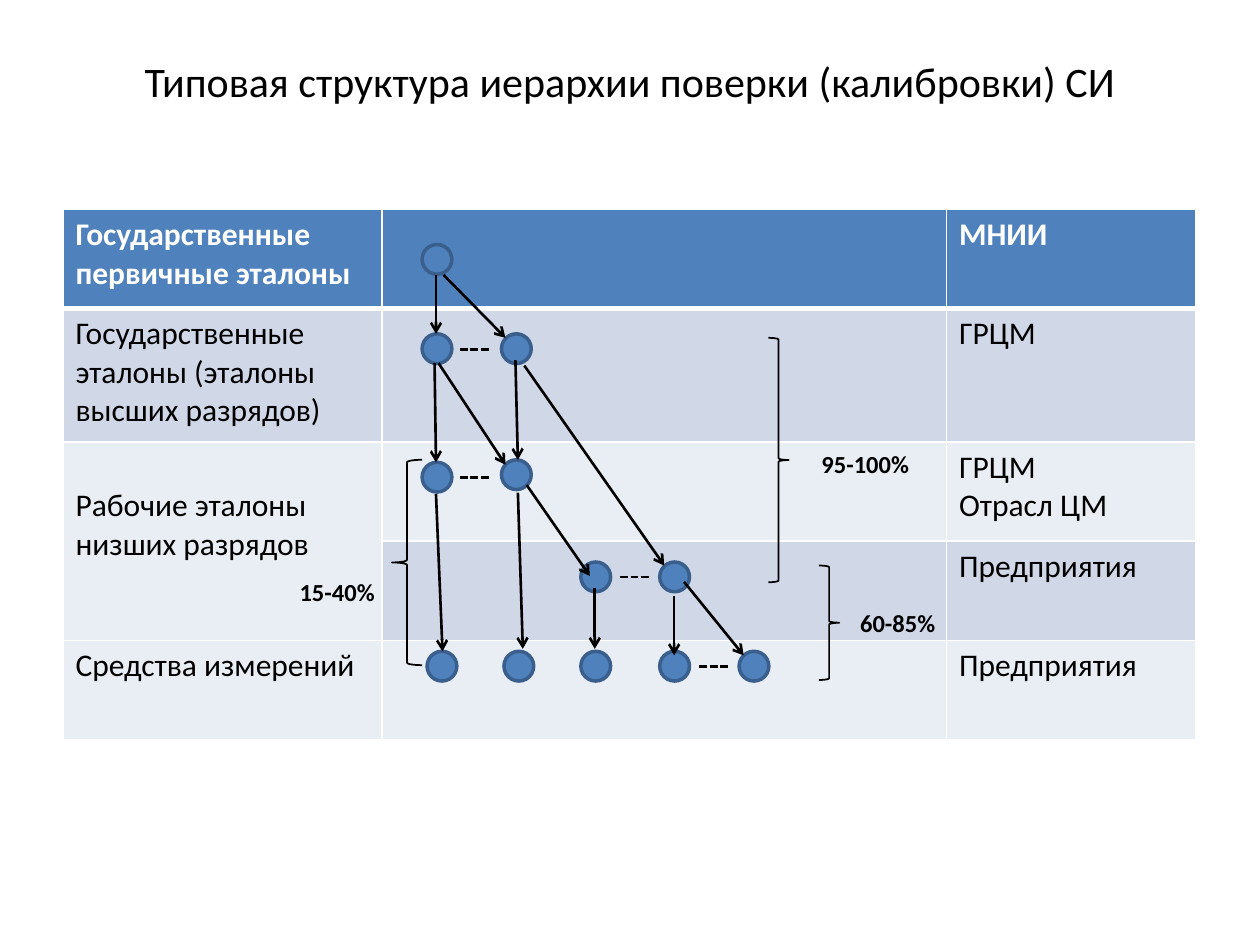
import pptx
import pptx.dml.color
import pptx.enum.dml
import pptx.enum.shapes
import pptx.enum.text
import pptx.oxml
import pptx.oxml.ns
import pptx.util
from lxml import etree

Cm, Pt = pptx.util.Cm, pptx.util.Pt
RGBColor = pptx.dml.color.RGBColor
MSO_SHAPE = pptx.enum.shapes.MSO_SHAPE
qn = pptx.oxml.ns.qn

BLACK = RGBColor(0x00, 0x00, 0x00)
WHITE = RGBColor(0xFF, 0xFF, 0xFF)
BLUE = RGBColor(0x4F, 0x81, 0xBD)
DARK_BLUE = RGBColor(0x3A, 0x5F, 0x8C)
BAND_DARK = RGBColor(0xD0, 0xD8, 0xE8)
BAND_LIGHT = RGBColor(0xE9, 0xED, 0xF4)


def write(tf, text, color, **formats):
    """Fill a text frame, one paragraph per line of text."""
    tf.word_wrap = True
    tf.text = text
    for p in tf.paragraphs:
        p.font.color.rgb = color
        for name, value in {"name": "Calibri", **formats}.items():
            setattr(p.font, name, value)


def add_line(x1, y1, x2, y2):
    """Draw a black line; lengths are in centimetres."""
    line = s.shapes.add_connector(pptx.enum.shapes.MSO_CONNECTOR.STRAIGHT,
                                  Cm(x1), Cm(y1), Cm(x2), Cm(y2))
    line.line.color.rgb = BLACK
    line.line.width = Pt(1.5)
    etree.SubElement(line._element.spPr, qn("a:effectLst"))
    return line


prs = pptx.Presentation()
prs.slide_width, prs.slide_height = Cm(25.4), Cm(19.05)
s = prs.slides.add_slide(prs.slide_layouts[6])

# Title
title = s.shapes.add_textbox(Cm(1.27), Cm(0.76), Cm(22.86), Cm(1.75))
write(title.text_frame, "Типовая структура иерархии поверки (калибровки) СИ", BLACK, size=Pt(24))
title.text_frame.vertical_anchor = pptx.enum.text.MSO_ANCHOR.MIDDLE
title.text_frame.paragraphs[0].alignment = pptx.enum.text.PP_ALIGN.CENTER

# Table: levels on the left, organisations on the right
rows = [
    ("Государственные первичные эталоны", "МНИИ"),
    ("Государственные эталоны (эталоны высших разрядов)", "ГРЦМ"),
    ("Рабочие эталоны низших разрядов", "ГРЦМ\nОтрасл ЦМ"),
    ("", "Предприятия"),
    ("Средства измерений", "Предприятия"),
]
row_fills = [BLUE, BAND_DARK, BAND_LIGHT, BAND_DARK, BAND_LIGHT]
col_widths = [6.43, 11.38, 5.03]
row_heights = [2, 2.69, 2, 2, 2]
table = s.shapes.add_table(len(rows), len(col_widths), Cm(1.27), Cm(4.22),
                           Cm(sum(col_widths)), Cm(sum(row_heights))).table
for column, width in zip(table.columns, col_widths):
    column.width = Cm(width)
for row, height in zip(table.rows, row_heights):
    row.height = Cm(height)

for i, (level, organisation) in enumerate(rows):
    header = i == 0
    for j, text in enumerate((level, "", organisation)):
        cell = table.cell(i, j)
        if text:
            write(cell.text_frame, text, WHITE if header else BLACK, size=Pt(18), bold=header)
        cell.fill.solid()
        cell.fill.fore_color.rgb = row_fills[i]
        widths = {"lnL": 1, "lnR": 1, "lnT": 3 if i == 1 else 1, "lnB": 3 if header else 1}
        for k, (side, width) in enumerate(widths.items()):
            border = pptx.oxml.parse_xml(
                f'<a:{side} xmlns:a="http://schemas.openxmlformats.org/drawingml/2006/main" '
                f'w="{Pt(width)}"><a:solidFill><a:srgbClr val="{WHITE}"/></a:solidFill></a:{side}>')
            cell._tc.get_or_add_tcPr().insert(k, border)
table.cell(2, 0).merge(table.cell(3, 0))
table.cell(2, 0).margin_top = Cm(0.9)

# Nodes of the hierarchy, level by level
levels = [
    (4.93, [8.51]),
    (6.73, [8.51, 10.11]),
    (9.32, [8.51]),
    (9.27, [10.11]),
    (11.33, [11.71, 13.3]),
    (13.13, [8.61, 10.16, 11.71, 13.3, 14.9]),
]
for top, lefts in levels:
    for left in lefts:
        sp = s.shapes.add_shape(MSO_SHAPE.FLOWCHART_CONNECTOR, Cm(left), Cm(top), Cm(0.6), Cm(0.6))
        sp.shadow.inherit = False
        sp.fill.solid()
        sp.fill.fore_color.rgb = BLUE
        sp.line.color.rgb = DARK_BLUE
        sp.line.width = Pt(2)

# Arrows from each standard to those it verifies
arrows = [
    (8.79, 5.54, 8.79, 6.73),
    (8.94, 5.54, 10.19, 6.81),
    (8.76, 7.32, 8.79, 9.32),
    (8.84, 7.32, 10.19, 9.37),
    (10.39, 7.26, 10.44, 9.27),
    (10.57, 7.37, 13.39, 11.4),
    (8.79, 9.96, 8.92, 13.13),
    (10.44, 9.93, 10.54, 13.08),
    (10.62, 9.78, 11.89, 11.61),
    (11.99, 11.86, 11.99, 13.08),
    (13.59, 12.01, 13.59, 13.21),
    (13.79, 11.73, 14.99, 13.21),
]
for ends in arrows:
    arrow = add_line(*ends)
    etree.SubElement(arrow.line._get_or_add_ln(), qn("a:tailEnd"), type="arrow")

# Dashes for the nodes left out
for x, y in [(9.27, 7.04), (9.27, 9.63), (12.5, 11.63), (14.1, 13.44)]:
    add_line(x, y, x + 0.6, y).line.dash_style = pptx.enum.dml.MSO_LINE.SQUARE_DOT

# Braces and their percentages
braces = [
    (MSO_SHAPE.RIGHT_BRACE, 15.49, 6.81, 0.41, 4.93),
    (MSO_SHAPE.RIGHT_BRACE, 16.51, 11.4, 0.41, 2.31),
    (MSO_SHAPE.LEFT_BRACE, 7.9, 9.27, 0.61, 4.14),
]
for kind, *box in braces:
    sp = s.shapes.add_shape(kind, *map(Cm, box))
    sp.shadow.inherit = False
    sp.fill.background()
    sp.line.color.rgb = BLACK
    sp.line.width = Pt(1)

for text, left, top in [("95-100%", 16.31, 8.92), ("60-85%", 17.09, 12.14), ("15-40%", 5.79, 11.51)]:
    label = s.shapes.add_textbox(Cm(left), Cm(top), Cm(2.39), Cm(0.86))
    write(label.text_frame, text, BLACK, size=Pt(14), bold=True)

prs.save("out.pptx")
